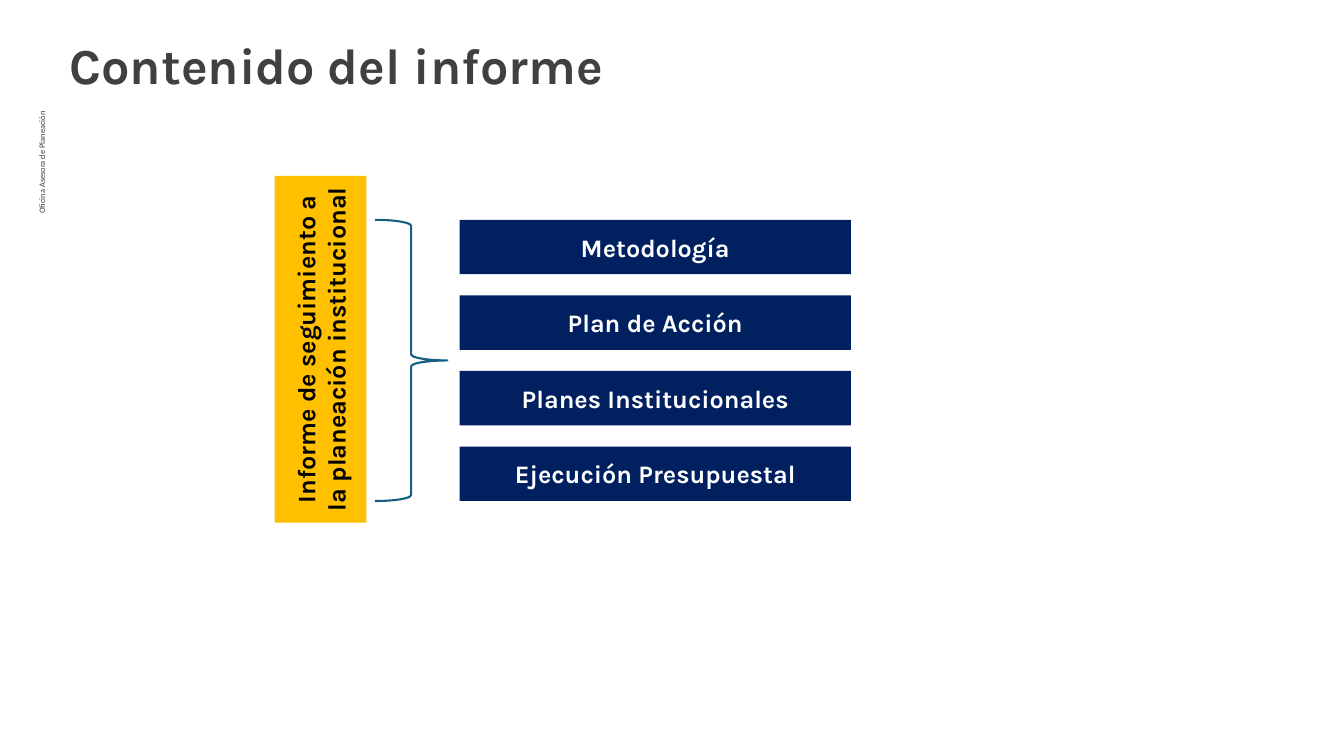
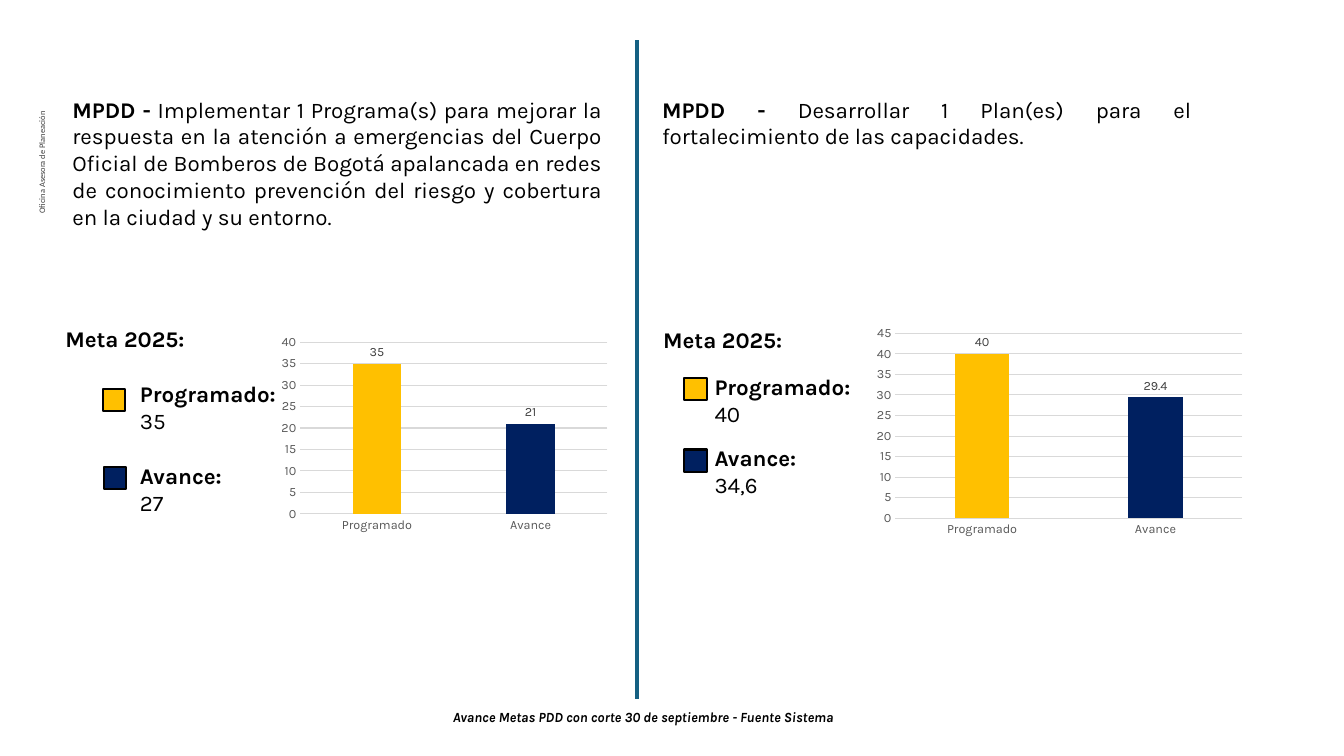
from lxml import etree
from pptx import Presentation
from pptx import util as u
from pptx.chart import data as chart_data
from pptx.dml import color
from pptx.enum import chart as chart_enum
from pptx.enum import shapes, text
from pptx.oxml import ns


class Theme:
    gold = color.RGBColor.from_string("FFC000")
    navy = color.RGBColor.from_string("002060")
    teal = color.RGBColor.from_string("156082")
    black = color.RGBColor.from_string("000000")
    white = color.RGBColor.from_string("FFFFFF")
    dark = color.RGBColor.from_string("404040")
    axis = color.RGBColor.from_string("595959")
    grid = color.RGBColor.from_string("D9D9D9")
    font = "Karla"
    office_font = "Calibri"
    title = 36
    block = 18
    body = 16
    note = 10
    tick = 9
    office = 6


ALIGN = text.PP_ALIGN


def add_text(frame, paragraphs, size, ink, align, font=Theme.font, italic=False):
    frame.word_wrap = True
    for index, runs in enumerate(paragraphs):
        paragraph = frame.paragraphs[0] if index == 0 else frame.add_paragraph()
        paragraph.alignment = align
        for words, bold in runs:
            run = paragraph.add_run()
            run.text = words
            run.font.name = font
            run.font.size = u.Pt(size)
            run.font.bold = bold
            run.font.italic = italic
            run.font.color.rgb = ink


def add_block(slide, preset, box, fill=None, line=None, width=1.5):
    block = slide.shapes.add_shape(preset, *map(u.Pt, box))
    block.shadow.inherit = False
    if fill is None:
        block.fill.background()
    else:
        block.fill.solid()
        block.fill.fore_color.rgb = fill
    if line is None:
        block.line.fill.background()
    else:
        block.line.color.rgb = line
        block.line.width = u.Pt(width)
    return block


deck = Presentation()
deck.slide_width, deck.slide_height = u.Pt(960), u.Pt(540)
contents, progress = [deck.slides.add_slide(deck.slide_layouts[6]) for _ in range(2)]

for slide in (contents, progress):
    office = slide.shapes.add_textbox(u.Pt(-63.4), u.Pt(161.3), u.Pt(186.5), u.Pt(13))
    office.rotation = 270
    frame = office.text_frame
    frame.margin_left = frame.margin_right = u.Pt(5)
    frame.margin_top = frame.margin_bottom = u.Pt(2.9)
    add_text(frame, [[("Oficina Asesora de Planeación", False)]],
             Theme.office, Theme.dark, ALIGN.RIGHT, Theme.office_font)

heading = contents.shapes.add_textbox(u.Pt(42.5), u.Pt(20.9), u.Pt(425.5), u.Pt(51))
add_text(heading.text_frame, [[("Contenido del informe", True)]],
         Theme.title, Theme.dark, ALIGN.LEFT)

report = add_block(contents, shapes.MSO_SHAPE.RECTANGLE, (105.1, 216.7, 247.7, 65.5), Theme.gold)
report.rotation = 270
add_text(report.text_frame, [[("Informe de seguimiento a la planeación institucional", True)]],
         Theme.block, Theme.black, ALIGN.CENTER)

chapters = ["Metodología", "Plan de Acción", "Planes Institucionales", "Ejecución Presupuestal"]
for index, chapter in enumerate(chapters):
    box = (328.3, 157 + 54 * index, 279.4, 38.9)
    bar = add_block(contents, shapes.MSO_SHAPE.RECTANGLE, box, Theme.navy)
    add_text(bar.text_frame, [[(chapter, True)]], Theme.block, Theme.white, ALIGN.CENTER)

add_block(contents, shapes.MSO_SHAPE.RIGHT_BRACE, (267.8, 157, 51.8, 200.9), line=Theme.teal)

goals = [
    {
        "statement": " Implementar 1 Programa(s) para mejorar la respuesta en la atención a "
                     "emergencias del Cuerpo Oficial de Bomberos de Bogotá apalancada en redes "
                     "de conocimiento prevención del riesgo y cobertura en la ciudad y su entorno.",
        "statement_box": (44.6, 64.8, 392.4, 104.4),
        "target_at": (39.6, 229),
        "keys": [("Programado:", "35", 92.9, 267.8, 73.4, 277.9),
                 ("Avance:", "27", 92.9, 326.9, 74.2, 333.4)],
        "chart_box": (195.8, 230.4, 252, 157),
        "values": (35, 21),
        "top": 40,
        "plot": {"x": 0.074, "y": 0.089, "w": 0.871, "h": 0.782},
    },
    {
        "statement": " Desarrollar 1 Plan(es) para el fortalecimiento de las capacidades.",
        "statement_box": (465.8, 64.8, 392.4, 46),
        "target_at": (466.6, 229.7),
        "keys": [("Programado:", "40", 503.3, 262.8, 488.9, 270),
                 ("Avance:", "34,6", 503.3, 313.9, 488.9, 321.1)],
        "chart_box": (620.6, 229.7, 272.2, 157),
        "values": (40, 29.4),
        "top": 45,
        "plot": None,
    },
]

for goal in goals:
    statement = progress.shapes.add_textbox(*map(u.Pt, goal["statement_box"]))
    add_text(statement.text_frame, [[("MPDD -", True), (goal["statement"], False)]],
             Theme.body, Theme.black, ALIGN.JUSTIFY)
    target = progress.shapes.add_textbox(*map(u.Pt, (*goal["target_at"], 134.6, 26.6)))
    add_text(target.text_frame, [[("Meta 2025:", True)]], Theme.body, Theme.black, ALIGN.JUSTIFY)

    for key, fill in zip(goal["keys"], (Theme.gold, Theme.navy)):
        label, amount, left, top, swatch_left, swatch_top = key
        entry = progress.shapes.add_textbox(u.Pt(left), u.Pt(top), u.Pt(131), u.Pt(46))
        add_text(entry.text_frame, [[(label, True)], [(amount, False)]],
                 Theme.body, Theme.black, ALIGN.JUSTIFY)
        add_block(progress, shapes.MSO_SHAPE.RECTANGLE, (swatch_left, swatch_top, 16, 16),
                  fill, Theme.black)

    figures = chart_data.CategoryChartData()
    figures.categories = ["Programado", "Avance"]
    figures.add_series("Series 1", goal["values"])
    chart = progress.shapes.add_chart(chart_enum.XL_CHART_TYPE.COLUMN_CLUSTERED,
                                      *map(u.Pt, goal["chart_box"]), figures).chart
    chart.has_legend = chart.has_title = False
    chart.font.name = Theme.font
    chart.font.size = u.Pt(Theme.note)
    chart.font.color.rgb = Theme.black

    for axis in (chart.category_axis, chart.value_axis):
        axis.major_tick_mark = axis.minor_tick_mark = chart_enum.XL_TICK_MARK.NONE
        axis.tick_labels.font.name = Theme.font
        axis.tick_labels.font.size = u.Pt(Theme.tick)
        axis.tick_labels.font.color.rgb = Theme.axis
    chart.value_axis.has_major_gridlines = True
    for rule in (chart.category_axis.format.line, chart.value_axis.major_gridlines.format.line):
        rule.color.rgb = Theme.grid
        rule.width = u.Pt(0.75)
    chart.value_axis.format.line.fill.background()
    chart.value_axis.minimum_scale = 0
    chart.value_axis.maximum_scale = goal["top"]
    chart.value_axis.major_unit = 5

    plot = chart.plots[0]
    plot.vary_by_categories = False
    plot.gap_width = 219
    plot.overlap = -27
    plot.has_data_labels = True
    labels = plot.data_labels
    labels.show_value = True
    labels.position = chart_enum.XL_LABEL_POSITION.OUTSIDE_END
    labels.font.name = Theme.font
    labels.font.size = u.Pt(Theme.tick)
    labels.font.color.rgb = Theme.dark
    for index, fill in enumerate((Theme.gold, Theme.navy)):
        column = plot.series[0].points[index].format.fill
        column.solid()
        column.fore_color.rgb = fill

    if goal["plot"]:
        area = chart._chartSpace.chart.plotArea
        for old in area.findall(ns.qn("c:layout")):
            area.remove(old)
        layout = etree.Element(ns.qn("c:layout"))
        area.insert(0, layout)
        manual = etree.SubElement(layout, ns.qn("c:manualLayout"))
        settings = {"layoutTarget": "inner", "xMode": "edge", "yMode": "edge", **goal["plot"]}
        for tag, value in settings.items():
            etree.SubElement(manual, ns.qn(f"c:{tag}")).set("val", str(value))

divider = progress.shapes.add_connector(shapes.MSO_CONNECTOR.STRAIGHT,
                                        u.Pt(455), u.Pt(28.8), u.Pt(455), u.Pt(499))
divider.line.color.rgb = Theme.teal
divider.line.width = u.Pt(2.25)
etree.SubElement(divider._element.spPr, ns.qn("a:effectLst"))

source = progress.shapes.add_textbox(u.Pt(268.6), u.Pt(502.6), u.Pt(381.6), u.Pt(19.4))
add_text(source.text_frame,
         [[("Avance Metas PDD con corte 30 de septiembre - Fuente Sistema", True)]],
         Theme.note, Theme.black, ALIGN.CENTER, italic=True)

deck.save("out.pptx")
